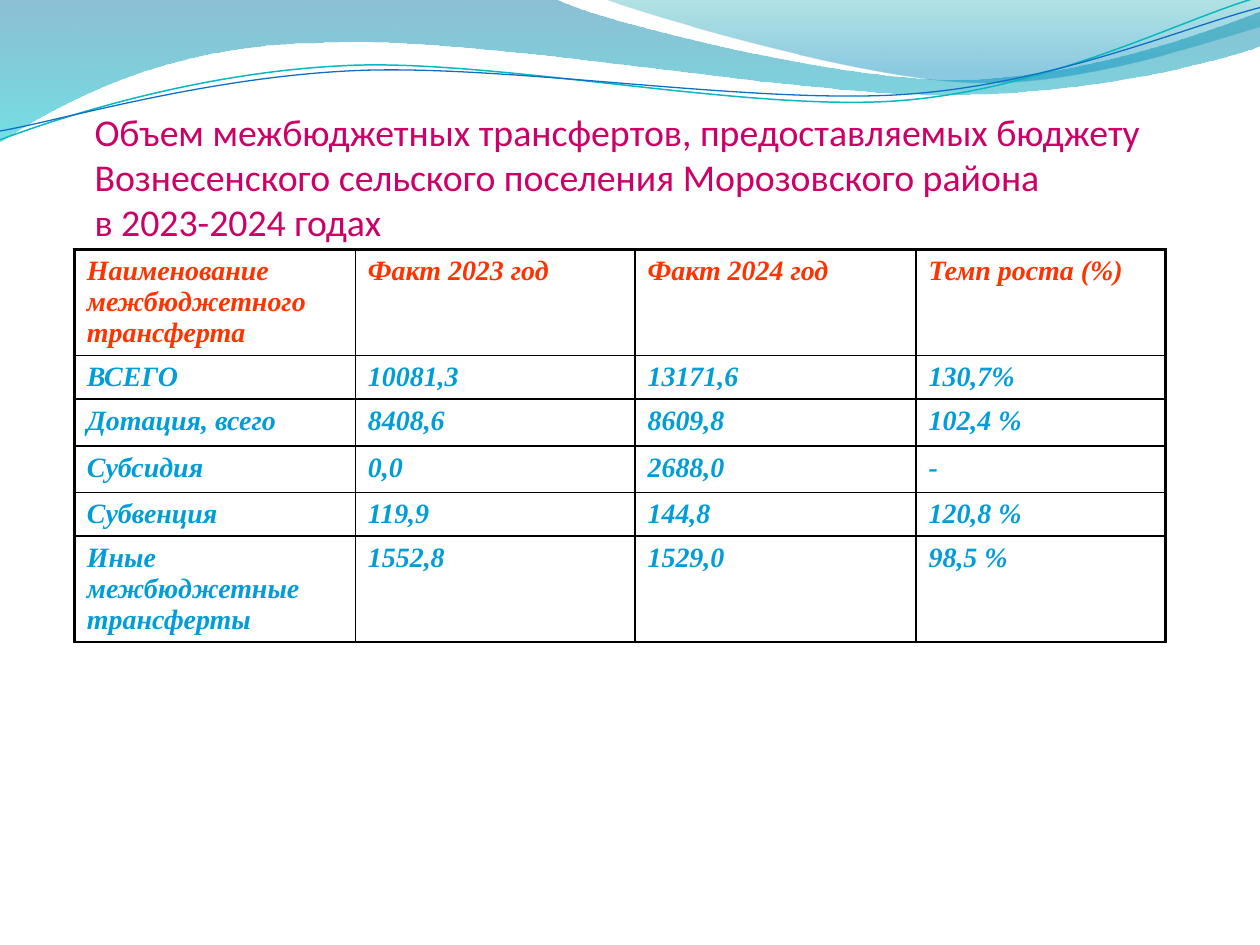
from math import cos, radians, sin

from lxml.etree import SubElement as Sub
from pptx import Presentation
from pptx.dml.color import RGBColor
from pptx.enum.text import MSO_ANCHOR as Anchor, MSO_AUTO_SIZE as Fit, PP_ALIGN as Align
from pptx.oxml.ns import qn
from pptx.util import Inches, Pt

TITLE = ("Объем межбюджетных трансфертов, предоставляемых бюджету "
         "Вознесенского сельского поселения Морозовского района \v"
         "в 2023-2024 годах")
ROWS = [
    ("Наименование межбюджетного трансферта", "Факт 2023 год", "Факт 2024 год", "Темп роста (%)"),
    ("ВСЕГО", "10081,3", "13171,6", "130,7%"),
    ("Дотация, всего", "8408,6", "8609,8", "102,4 %"),
    ("Субсидия", "0,0", "2688,0", "-"),
    ("Субвенция", "119,9", "144,8", "120,8 %"),
    ("Иные межбюджетные трансферты", "1552,8", "1529,0", "98,5 %"),
]
WIDTHS = [2.23, 2.22, 2.23, 1.98]
HEIGHTS = [0.68, 0.29, 0.37, 0.37, 0.29, 0.68]

WAVES = [
    ((-0.01, -0.01, 10.02, 1.14),
     [(0, -0.01), (4.4, -0.01),
      (4.76, 0.17, 6.64, 0.63, 7.58, 0.63),
      (8.53, 0.63, 9.58, 0.26, 10, 0.09),
      (10.01, 0.36),
      (9.83, 0.44, 8.7, 0.76, 7.46, 0.75),
      (6.22, 0.75, 3.82, 0.28, 2.57, 0.34),
      (1.29, 0.35, 0.46, 0.83, -0.01, 1.13),
      (0, -0.01)],
     [(0, "0074A1", 45), (1, "00C6CF", 55)]),
    ((4.79, -0.01, 5.21, 0.7),
     [(4.79, -0.01),
      (5.09, 0.11, 6.82, 0.62, 7.69, 0.65),
      (8.56, 0.69, 9.61, 0.32, 10, 0.21),
      (10, 0), (4.79, -0.01)],
     [(0, "00A1A9", 30), (0.8, "008BBF", 45)]),
]
TILT = -2.7
LINES = [
    ((-0.02, 0.22, 10.02, 0.71),
     [(0, 1.11),
      (0.48, 0.93, 1.58, 0.57, 2.77, 0.52),
      (3.95, 0.47, 5.93, 0.89, 7.13, 0.8),
      (8.33, 0.71, 9.38, 0.15, 9.98, -0.02)], "0AB8BF", 0.85),
    ((-0.02, 0.3, 10.03, 0.58),
     [(0, 1.04),
      (0.47, 0.96, 1.64, 0.61, 2.83, 0.56),
      (4.03, 0.51, 5.97, 0.83, 7.17, 0.75),
      (8.36, 0.67, 9.41, 0.21, 10, 0.06)], "0F6FC6", 0.75),
]


def rgb(code):
    return RGBColor.from_string(code)


def place(item, box):
    item.left, item.top, item.width, item.height = map(Inches, box)


def draw(box, path, tilt=0, close=False):
    left, top, width, height = box
    turn = radians(-tilt)

    def local(x, y):
        x -= left + width / 2
        y -= top + height / 2
        return (Inches(x * cos(turn) - y * sin(turn) + width / 2),
                Inches(x * sin(turn) + y * cos(turn) + height / 2))

    segs = [[local(*seg[n:n + 2]) for n in range(0, len(seg), 2)] for seg in path]
    pen = slide.shapes.build_freeform(*segs[0][0])
    pen.add_line_segments([seg[-1] for seg in segs[1:]], close=False)
    shape = pen.convert_to_shape()
    place(shape, box)
    shape.rotation = tilt
    shape.shadow.inherit = False
    track = next(shape._element.iter(qn("a:path")))
    track.set("w", str(Inches(width)))
    track.set("h", str(Inches(height)))
    for node in list(track):
        track.remove(node)
    for n, seg in enumerate(segs):
        kind = "moveTo" if n == 0 else "lnTo" if len(seg) == 1 else "cubicBezTo"
        node = Sub(track, qn("a:" + kind))
        for x, y in seg:
            Sub(node, qn("a:pt"), x=str(x), y=str(y))
    if close:
        Sub(track, qn("a:close"))
    return shape


def wave(box, path, stops):
    shape = draw(box, path, close=True)
    shape.line.fill.background()
    shape.fill.gradient()
    shape.fill.gradient_angle = 270
    for stop, (pos, code, alpha) in zip(shape.fill.gradient_stops, stops):
        stop.position = pos
        stop.color.rgb = rgb(code)
    tones = shape._element.spPr.iter(qn("a:srgbClr"))
    for tone, (pos, code, alpha) in zip(list(tones), stops):
        Sub(tone, qn("a:alpha"), val=str(alpha * 1000))


def border(cell, sides):
    props = cell._tc.get_or_add_tcPr()
    for side, width in sides.items():
        edge = Sub(props, qn("a:ln" + side), w=str(Pt(width)))
        fill = Sub(edge, qn("a:solidFill"))
        Sub(fill, qn("a:srgbClr"), val="000000")


def style(font, name, size, code):
    font.name = name
    font.size = Pt(size)
    font.color.rgb = rgb(code)


prs = Presentation()
prs.slide_width, prs.slide_height = Inches(10), Inches(7.5)
slide = prs.slides.add_slide(prs.slide_layouts[5])

for box, path, stops in WAVES:
    wave(box, path, stops)
for box, path, code, width in LINES:
    shape = draw(box, path, TILT)
    shape.fill.background()
    shape.line.color.rgb = rgb(code)
    shape.line.width = Pt(width)

title = slide.shapes.title
slide.shapes._spTree.append(title._element)
place(title, (0.75, 0.68, 8.66, 1.26))
frame = title.text_frame
frame.text = TITLE
frame.auto_size = Fit.NONE
frame.word_wrap = True
frame.vertical_anchor = Anchor.BOTTOM
frame.margin_left = frame.margin_right = frame.margin_bottom = 0
frame.margin_top = Inches(0.05)
head = frame.paragraphs[0]
head.alignment = Align.LEFT
style(head.font, "Calibri", 21.6, "CC0066")

box = (0.59, 1.98, 8.66, 3.28)
grid = slide.shapes.add_table(len(ROWS), len(WIDTHS), *map(Inches, box))
table = grid.table
table.first_row = table.horz_banding = False
for col, width in zip(table.columns, WIDTHS):
    col.width = Inches(width)
for row, height in zip(table.rows, HEIGHTS):
    row.height = Inches(height)
place(grid, box)
for i, row in enumerate(ROWS):
    for j, text in enumerate(row):
        cell = table.cell(i, j)
        cell.text = text
        font = cell.text_frame.paragraphs[0].font
        style(font, "Times New Roman", 16, "009DD9" if i else "FF3300")
        font.bold = font.italic = True
        border(cell, {"L": 1 if j else 2.25,
                      "R": 2.25 if j == len(row) - 1 else 1,
                      "T": 1 if i else 2.25,
                      "B": 1})
        cell.fill.background()

prs.save("out.pptx")
